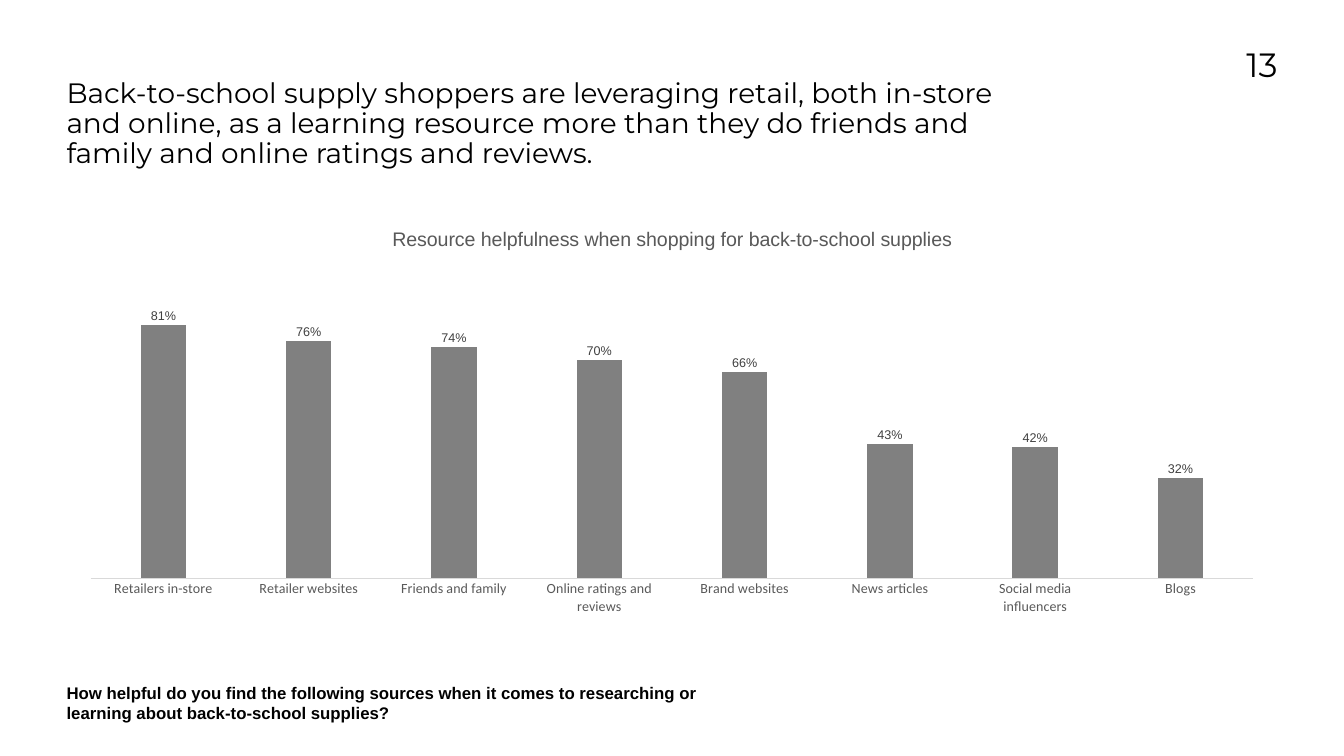
from lxml.etree import SubElement
from pptx import Presentation
from pptx.chart.data import CategoryChartData
from pptx.dml.color import RGBColor
from pptx.enum.chart import XL_CHART_TYPE, XL_LABEL_POSITION, XL_TICK_MARK
from pptx.enum.text import PP_ALIGN
from pptx.oxml.ns import qn
from pptx.util import Inches, Pt

W, H = 26.67, 15
LEFT = 1.32
COLORS = {"text": "000000", "muted": "595959", "label": "404040",
          "bar": "808080", "axis": "D9D9D9"}
HELPFULNESS = {
    "Retailers in-store": 0.81,
    "Retailer websites": 0.76,
    "Friends and family": 0.74,
    "Online ratings and reviews": 0.70,
    "Brand websites": 0.66,
    "News articles": 0.43,
    "Social media influencers": 0.42,
    "Blogs": 0.32,
}


def color(name):
    return RGBColor.from_string(COLORS[name])


def set_font(font, name, size, tone, bold=False):
    font.name, font.size, font.bold = name, Pt(size), bold
    font.color.rgb = color(tone)


def add_text(s, box, text, name, size, bold=False, align=PP_ALIGN.LEFT, spacing=1.0):
    tf = s.shapes.add_textbox(*map(Inches, box)).text_frame
    tf.word_wrap = True
    tf.margin_left = tf.margin_right = tf.margin_top = tf.margin_bottom = 0
    p = tf.paragraphs[0]
    p.alignment, p.line_spacing = align, spacing
    r = p.add_run()
    r.text = text
    set_font(r.font, name, size, "text", bold)


def set_plot_layout(chart, **shares):
    plot_area = chart.plots[0]._element.getparent()
    layout = plot_area.find(qn("c:layout"))
    if layout is None:
        layout = SubElement(plot_area, qn("c:layout"))
        plot_area.insert(0, layout)
    manual = SubElement(layout, qn("c:manualLayout"))
    settings = {"layoutTarget": "inner", "xMode": "edge", "yMode": "edge", **shares}
    for tag, value in settings.items():
        SubElement(manual, qn(f"c:{tag}")).set("val", str(value))


def add_bar_chart(s, box, title, values):
    data = CategoryChartData(number_format="0%")
    data.categories = list(values)
    data.add_series("Series 1", list(values.values()))
    chart = s.shapes.add_chart(
        XL_CHART_TYPE.COLUMN_CLUSTERED, *map(Inches, box), data).chart
    set_font(chart.font, "Calibri", 10, "text")
    chart.has_legend = False
    chart.has_title = True
    r = chart.chart_title.text_frame.paragraphs[0].add_run()
    r.text = title
    set_font(r.font, "Arial", 28, "muted")
    chart.chart_title.include_in_layout = False

    axis = chart.category_axis
    axis.major_tick_mark = XL_TICK_MARK.NONE
    set_font(axis.tick_labels.font, "Calibri", 20, "muted")
    axis.format.line.color.rgb = color("axis")
    axis.format.line.width = Pt(0.75)
    axis = chart.value_axis
    axis.visible = axis.has_major_gridlines = False
    axis.minimum_scale, axis.maximum_scale = 0, 1
    axis.tick_labels.number_format = "0%"
    axis.tick_labels.number_format_is_linked = False

    plot = chart.plots[0]
    plot.gap_width, plot.overlap = 219, -27
    plot.vary_by_categories = False
    fill = plot.series[0].format.fill
    fill.solid()
    fill.fore_color.rgb = color("bar")
    labels = plot.series[0].data_labels
    labels.show_value = True
    labels.position = XL_LABEL_POSITION.OUTSIDE_END
    labels.number_format, labels.number_format_is_linked = "0%", False
    set_font(labels.font, "Arial", 18, "label")
    set_plot_layout(chart, x=0.02, y=0.13, w=0.96, h=0.76)


def main():
    prs = Presentation()
    prs.slide_width, prs.slide_height = Inches(W), Inches(H)
    s = prs.slides.add_slide(prs.slide_layouts[6])
    add_bar_chart(s, (LEFT, 4.22, W - 2 * LEFT, 8.15),
                  "Resource helpfulness when shopping for back-to-school supplies",
                  HELPFULNESS)
    add_text(s, (LEFT, 1.57, 18.8, 2.08),
             "Back-to-school supply shoppers are leveraging retail, both in-store and "
             "online, as a learning resource more than they do friends and family and "
             "online ratings and reviews.", "Montserrat", 40, spacing=0.9)
    add_text(s, (LEFT, 13.55, 13.27, 0.65),
             "How helpful do you find the following sources when it comes to "
             "researching or learning about back-to-school supplies?",
             "Arial", 24, bold=True)
    add_text(s, (W - LEFT - 2.25, 0.88, 2.25, 1.64), "13", "Montserrat", 48,
             align=PP_ALIGN.RIGHT)
    prs.save("out.pptx")


if __name__ == "__main__":
    main()
